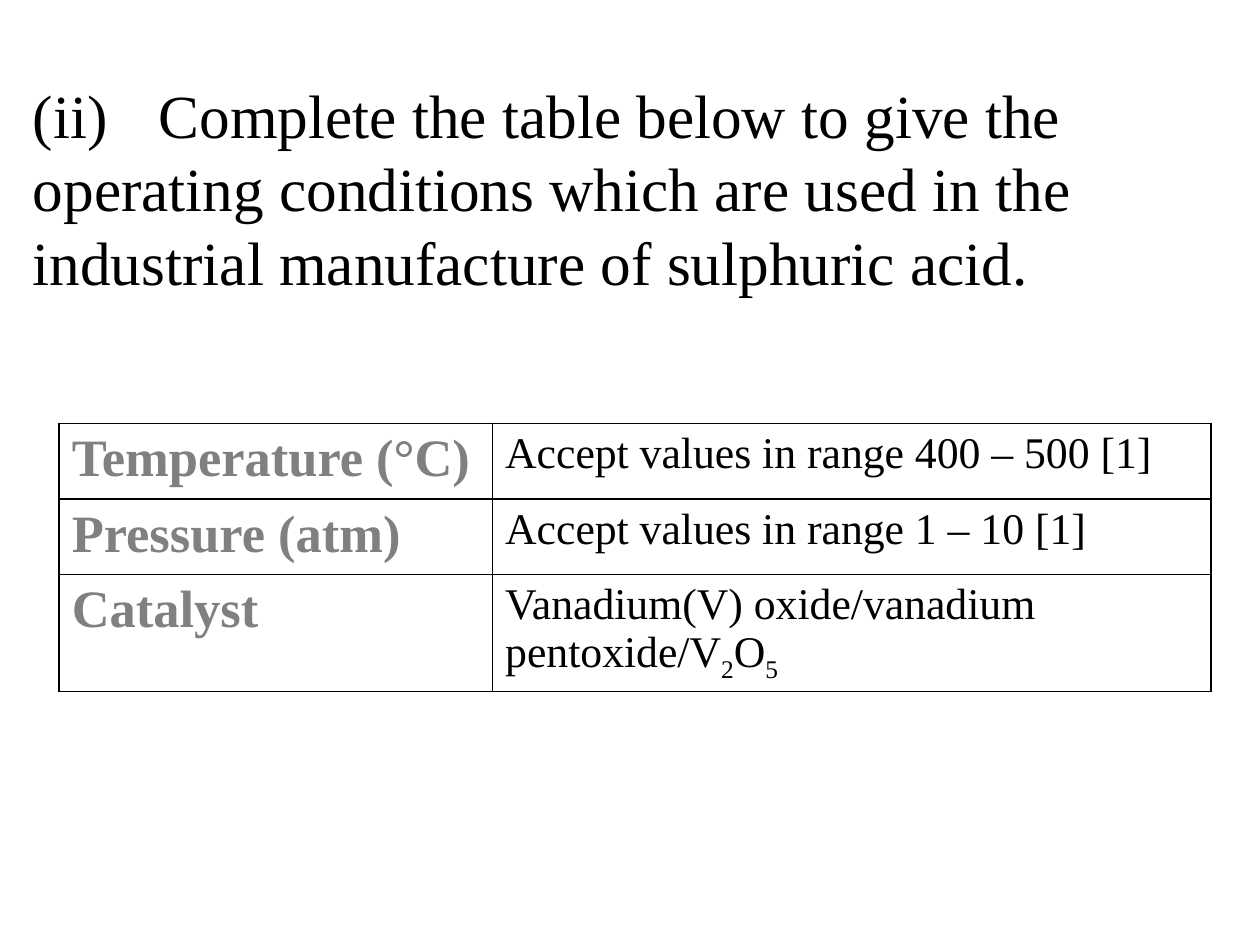
"""Build a question slide with a table of operating conditions for sulphuric acid."""
import lxml.etree
import pptx
import pptx.dml.color
import pptx.enum.text
import pptx.oxml
import pptx.oxml.ns
import pptx.util

Inches = pptx.util.Inches
Pt = pptx.util.Pt
RGB = pptx.dml.color.RGBColor.from_string

theme = {
    "font": "Times New Roman",
    "ink": "000000",
    "grey": "808080",
    "title": 35,
    "label": 30,
    "value": 25,
    "pitch": 42,
    "border": 1,
}


def style(run, size, color, bold=False):
    run.font.name = theme["font"]
    run.font.size = Pt(theme[size])
    run.font.color.rgb = RGB(theme[color])
    run.font.bold = bold


def frame(cell):
    props = cell._tc.get_or_add_tcPr()
    for side in ("lnL", "lnR", "lnT", "lnB"):
        line = lxml.etree.SubElement(props, pptx.oxml.ns.qn("a:" + side))
        line.set("w", str(Pt(theme["border"])))
        fill = lxml.etree.SubElement(line, pptx.oxml.ns.qn("a:solidFill"))
        color = lxml.etree.SubElement(fill, pptx.oxml.ns.qn("a:srgbClr"))
        color.set("val", theme["ink"])
    cell.fill.background()


deck = pptx.Presentation()
deck.slide_width, deck.slide_height = Inches(10), Inches(7.5)
slide = deck.slides.add_slide(deck.slide_layouts[5])

title = slide.shapes.title
title.left, title.top = Inches(0.16), Inches(0.23)
title.width, title.height = Inches(9.61), Inches(7.11)
text = title.text_frame
text.word_wrap = True
text.auto_size = pptx.enum.text.MSO_AUTO_SIZE.NONE
text.vertical_anchor = pptx.enum.text.MSO_ANCHOR.TOP
text.margin_top = Inches(0.38)
text.text = (
    "(ii)\tComplete the table below to give the operating conditions "
    "which are used in the industrial manufacture of sulphuric acid."
)
para = text.paragraphs[0]
para.alignment = pptx.enum.text.PP_ALIGN.LEFT
para.line_spacing = Pt(theme["pitch"])
for run in para.runs:
    style(run, "title", "ink")

rows = [
    ("Temperature (°C)", ["Accept values in range 400 – 500 [1]"]),
    ("Pressure (atm)", ["Accept values in range 1 – 10 [1]"]),
    ("Catalyst", ["Vanadium(V) oxide/vanadium pentoxide/V", "2", "O", "5"]),
]
table = slide.shapes.add_table(
    len(rows), 2, Inches(0.47), Inches(3.36), Inches(9.14), Inches(2.13)
).table
table.first_row = table.horz_banding = False
for col, width in zip(table.columns, (3.44, 5.7)):
    col.width = Inches(width)
for row, height in zip(table.rows, (0.6, 0.6, 0.93)):
    row.height = Inches(height)

for row, (label, parts) in zip(table.rows, rows):
    for cell in row.cells:
        frame(cell)
    name, value = row.cells
    name.text_frame.text = label
    style(name.text_frame.paragraphs[0].runs[0], "label", "grey", True)
    for part in parts:
        run = value.text_frame.paragraphs[0].add_run()
        run.text = part
        style(run, "value", "ink")
        if part.isdigit():
            run._r.get_or_add_rPr().set("baseline", "-25000")

deck.save("out.pptx")
